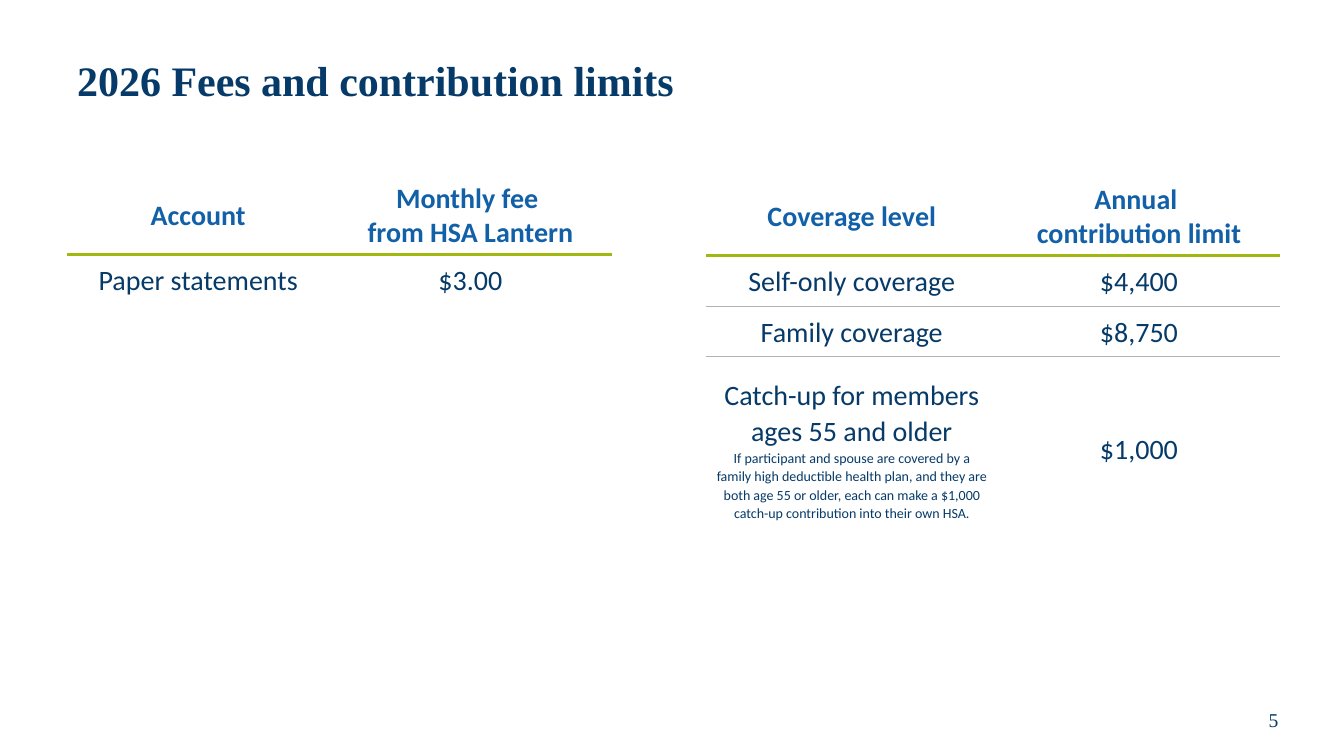
from dataclasses import dataclass
from typing import NamedTuple

from lxml.etree import SubElement
from pptx import Presentation
from pptx.dml.color import RGBColor
from pptx.enum.text import MSO_ANCHOR as Anchor, PP_ALIGN as Align
from pptx.oxml.ns import qn
from pptx.slide import Slide
from pptx.table import _Cell as Cell
from pptx.text.text import _Paragraph as Paragraph
from pptx.util import Pt


@dataclass(frozen=True)
class Theme:
    navy: str = "063A68"
    blue: str = "1260A7"
    green: str = "A0B810"
    gray: str = "B2B2B2"
    serif: str = "Times New Roman"
    sans: str = "Calibri"
    title_size: float = 30
    table_size: float = 20
    note_size: float = 10
    number_size: float = 14
    header_rule: float = 2.25
    row_rule: float = 0.5


THEME = Theme()


class Box(NamedTuple):
    left: float
    top: float
    width: float
    height: float


class TextStyle(NamedTuple):
    font: str
    size: float
    color: str
    bold: bool = False
    align: Align = Align.CENTER
    spacing: float = 1.0


class Rule(NamedTuple):
    color: str
    width: float


class Label(NamedTuple):
    text: str
    box: Box
    style: TextStyle


class FeeTable(NamedTuple):
    left: float
    top: float
    col_widths: list[float]
    row_heights: list[float]
    rows: list[tuple[str, str]]


TITLE = TextStyle(THEME.serif, THEME.title_size, THEME.navy, True, Align.LEFT, 0.9)
NUMBER = TextStyle(THEME.serif, THEME.number_size, THEME.navy)
HEADER = TextStyle(THEME.sans, THEME.table_size, THEME.blue, True)
BODY = TextStyle(THEME.sans, THEME.table_size, THEME.navy, spacing=1.07)
NOTE = BODY._replace(size=THEME.note_size)

HEADER_RULE = Rule(THEME.green, THEME.header_rule)
ROW_RULE = Rule(THEME.gray, THEME.row_rule)

LABELS = [
    Label("2026 Fees and contribution limits", Box(48, 18, 864, 82.8), TITLE),
    Label("5", Box(867.6, 496, 84.2, 36), NUMBER),
]

TABLES = [
    FeeTable(48, 126, [187.2, 201.6], [56, 36], [
        ("Account", "Monthly fee \vfrom HSA Lantern"),
        ("Paper statements", "$3.00"),
    ]),
    FeeTable(504, 126.7, [208.8, 201.6], [56, 36, 36, 132], [
        ("Coverage level", "Annual \vcontribution limit"),
        ("Self-only coverage", "$4,400"),
        ("Family coverage", "$8,750"),
        ("Catch-up for members ages 55 and older\n"
         "If participant and spouse are covered by a family high deductible "
         "health plan, and they are both age 55 or older, each can make a "
         "$1,000 catch-up contribution into their own HSA.", "$1,000"),
    ]),
]


def style_paragraph(p: Paragraph, style: TextStyle) -> None:
    p.alignment = style.align
    p.line_spacing = style.spacing
    for r in p.runs:
        r.font.name = style.font
        r.font.size = Pt(style.size)
        r.font.bold = style.bold
        r.font.color.rgb = RGBColor.from_string(style.color)


def add_label(s: Slide, label: Label) -> None:
    sp = s.shapes.add_textbox(*map(Pt, label.box))
    tf = sp.text_frame
    tf.word_wrap = True
    tf.vertical_anchor = Anchor.MIDDLE
    tf.text = label.text
    style_paragraph(tf.paragraphs[0], label.style)


def set_borders(cell: Cell, top: Rule | None, bottom: Rule | None) -> None:
    """Draw the given horizontal rules and hide every other edge."""
    tc_pr = cell._tc.get_or_add_tcPr()
    edges = {"a:lnL": None, "a:lnR": None, "a:lnT": top, "a:lnB": bottom}
    for tag, rule in edges.items():
        line = SubElement(tc_pr, qn(tag))
        if rule is None:
            SubElement(line, qn("a:noFill"))
        else:
            line.set("w", str(int(Pt(rule.width))))
            fill = SubElement(line, qn("a:solidFill"))
            SubElement(fill, qn("a:srgbClr"), val=rule.color)


def rule_below(row: int, row_count: int) -> Rule | None:
    if row < 0 or row == row_count - 1:
        return None
    return HEADER_RULE if row == 0 else ROW_RULE


def add_fee_table(s: Slide, spec: FeeTable) -> None:
    count = len(spec.rows)
    box = Box(spec.left, spec.top, sum(spec.col_widths), sum(spec.row_heights))
    table = s.shapes.add_table(count, len(spec.col_widths), *map(Pt, box)).table
    table.first_row = table.horz_banding = False
    for column, width in zip(table.columns, spec.col_widths):
        column.width = Pt(width)
    for i, (height, texts) in enumerate(zip(spec.row_heights, spec.rows)):
        table.rows[i].height = Pt(height)
        for j, text in enumerate(texts):
            cell = table.cell(i, j)
            set_borders(cell, rule_below(i - 1, count), rule_below(i, count))
            cell.fill.background()
            cell.vertical_anchor = Anchor.MIDDLE
            cell.text_frame.text = text
            main, *notes = cell.text_frame.paragraphs
            style_paragraph(main, HEADER if i == 0 else BODY)
            for note in notes:
                style_paragraph(note, NOTE)


def main() -> None:
    prs = Presentation()
    prs.slide_width, prs.slide_height = Pt(960), Pt(540)
    s = prs.slides.add_slide(prs.slide_layouts[6])
    for label in LABELS:
        add_label(s, label)
    for spec in TABLES:
        add_fee_table(s, spec)
    prs.save("out.pptx")


if __name__ == "__main__":
    main()
